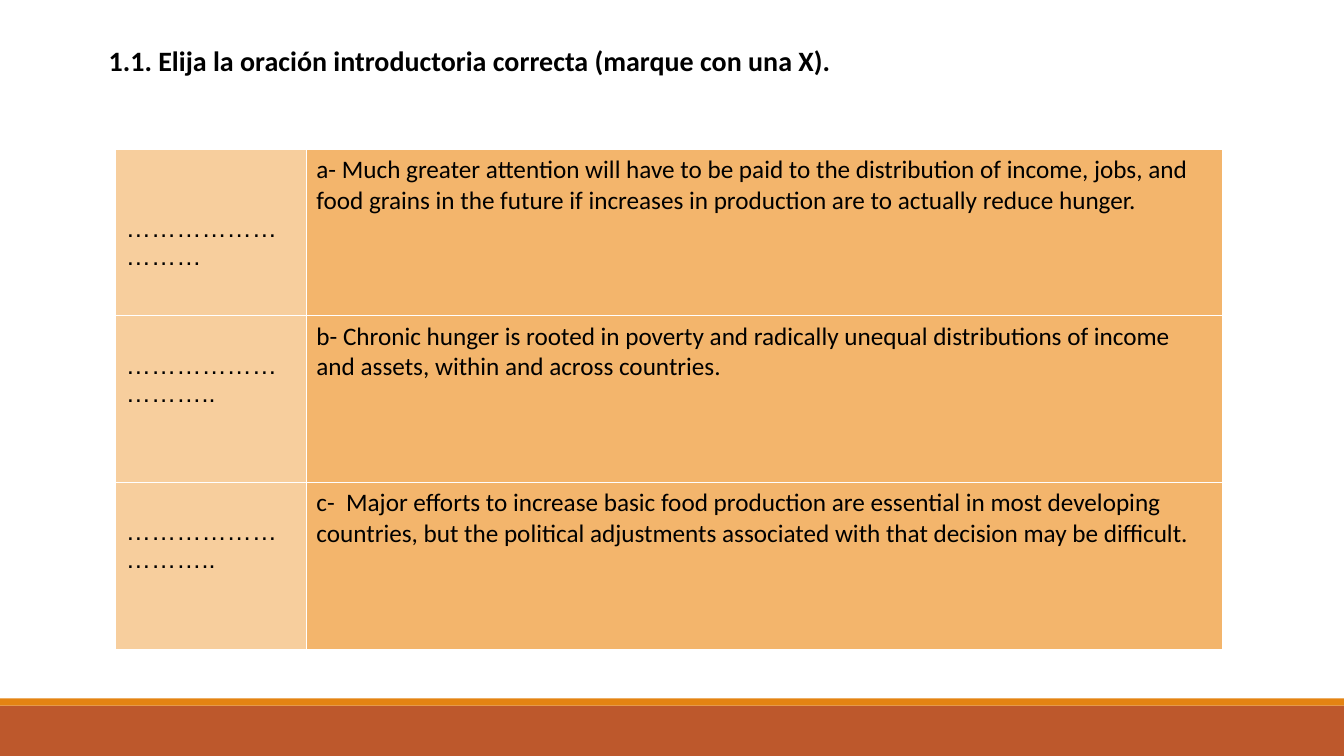
from dataclasses import dataclass

from lxml import etree
from pptx import Presentation
from pptx.dml.color import RGBColor
from pptx.enum.shapes import MSO_SHAPE
from pptx.enum.text import MSO_ANCHOR, PP_ALIGN
from pptx.oxml.ns import qn
from pptx.util import Cm, Pt

RECTANGLE = MSO_SHAPE.RECTANGLE
MIDDLE = MSO_ANCHOR.MIDDLE
JUSTIFY = PP_ALIGN.JUSTIFY


@dataclass(frozen=True)
class Theme:
    ink: str = "000000"
    grid: str = "FFFFFF"
    mark_fill: str = "F7CE9D"
    sentence_fill: str = "F3B56C"
    stripe: str = "E48312"
    footer: str = "BD582C"
    heading_font: str = "Calibri"
    mark_font: str = "Arial"
    heading_size: int = 20
    body_size: int = 18
    grid_width: int = 1


THEME = Theme()
SLIDE_WIDTH, SLIDE_HEIGHT = 33.87, 19.05
COLUMN_WIDTHS = (4.8, 23.09)
ROW_HEIGHT = 4.2
CELL_MARGIN = 0.13

HEADING = "1.1. Elija la oración introductoria correcta (marque con una X)."
# Answer dots, their distance from the top of the row in cm, sentence
OPTIONS = (
    ("………………………", 1.65,
     "a- Much greater attention will have to be paid to the distribution of income, "
     "jobs, and food grains in the future if increases in production are to actually "
     "reduce hunger."),
    ("………………………..", 0.89,
     "b- Chronic hunger is rooted in poverty and radically unequal distributions of "
     "income and assets, within and across countries."),
    ("………………………..", 0.89,
     "c-  Major efforts to increase basic food production are essential in most "
     "developing countries, but the political adjustments associated with that "
     "decision may be difficult."),
)


def write(frame, text, font, size, bold=False):
    paragraph = frame.paragraphs[0]
    run = paragraph.add_run()
    run.text = text
    for name, value in {"name": font, "size": Pt(size), "bold": bold}.items():
        setattr(run.font, name, value)
    run.font.color.rgb = RGBColor.from_string(THEME.ink)
    return paragraph


def add_band(slide, top, height, color):
    band = slide.shapes.add_shape(RECTANGLE, 0, Cm(top), Cm(SLIDE_WIDTH), Cm(height))
    band.shadow.inherit = False
    band.fill.solid()
    band.fill.fore_color.rgb = RGBColor.from_string(color)
    band.line.fill.background()


def add_heading(slide):
    box = slide.shapes.add_textbox(Cm(2.49), Cm(0.97), Cm(20.02), Cm(1.12))
    frame = box.text_frame
    frame.word_wrap = True
    frame.vertical_anchor = MIDDLE
    paragraph = write(frame, HEADING, THEME.heading_font, THEME.heading_size, bold=True)
    paragraph.alignment = JUSTIFY


def add_borders(cell):
    """Draw all four sides; the lines must come before the fill in the XML."""
    properties = cell._tc.get_or_add_tcPr()
    for position, side in enumerate(("a:lnL", "a:lnR", "a:lnT", "a:lnB")):
        line = etree.Element(qn(side), w=str(Pt(THEME.grid_width)))
        fill = etree.SubElement(line, qn("a:solidFill"))
        etree.SubElement(fill, qn("a:srgbClr"), val=THEME.grid)
        properties.insert(position, line)


def fill_cell(cell, text, font, color, margin_top):
    cell.margin_top = Cm(margin_top)
    cell.fill.solid()
    cell.fill.fore_color.rgb = RGBColor.from_string(color)
    add_borders(cell)
    write(cell.text_frame, text, font, THEME.body_size)


def add_options(slide):
    table = slide.shapes.add_table(
        len(OPTIONS), len(COLUMN_WIDTHS), Cm(2.92), Cm(3.76),
        Cm(sum(COLUMN_WIDTHS)), Cm(ROW_HEIGHT * len(OPTIONS))).table
    table.first_row = table.horz_banding = False
    for column, width in zip(table.columns, COLUMN_WIDTHS):
        column.width = Cm(width)
    for row, (dots, dots_top, sentence) in zip(table.rows, OPTIONS):
        row.height = Cm(ROW_HEIGHT)
        mark_cell, sentence_cell = row.cells
        fill_cell(mark_cell, dots, THEME.mark_font, THEME.mark_fill, dots_top)
        fill_cell(sentence_cell, sentence, THEME.heading_font,
                  THEME.sentence_fill, CELL_MARGIN)


def main():
    presentation = Presentation()
    presentation.slide_width = Cm(SLIDE_WIDTH)
    presentation.slide_height = Cm(SLIDE_HEIGHT)
    slide = presentation.slides.add_slide(presentation.slide_layouts[6])
    add_band(slide, 17.78, 1.27, THEME.footer)
    add_band(slide, 17.6, 0.18, THEME.stripe)
    add_heading(slide)
    add_options(slide)
    presentation.save("out.pptx")


if __name__ == "__main__":
    main()
